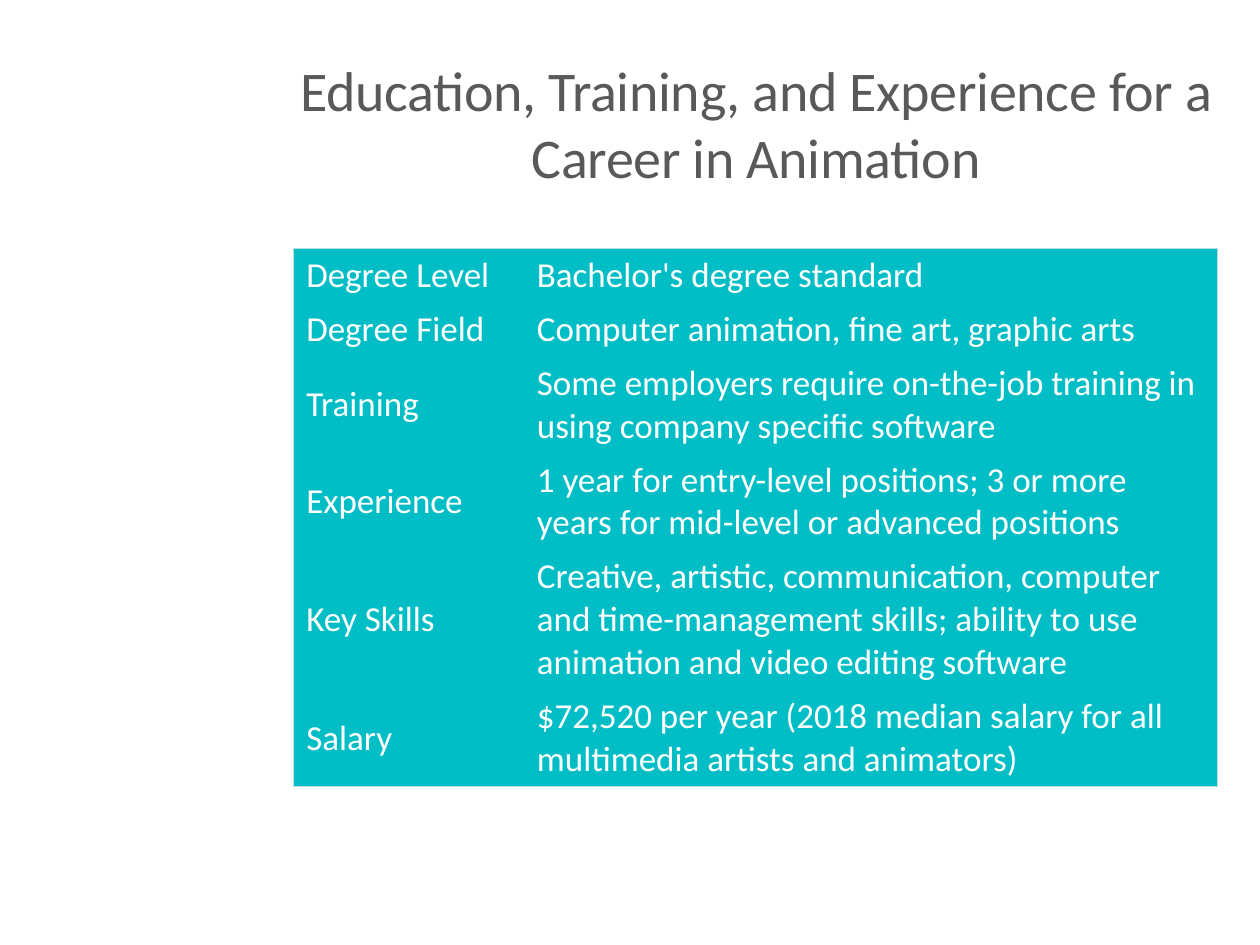
from typing import NamedTuple

from lxml import etree
from pptx import Presentation
from pptx import util as u
from pptx.dml.color import RGBColor
from pptx.enum import text
from pptx.oxml import ns

FONT = "Calibri"
TEAL, WHITE, GRAY, EDGE = "00BDC6", "FFFFFF", "595959", "B8DCDE"
LINE_HEIGHT, CELL_MARGIN = 24.4, 3.2


class Requirement(NamedTuple):
    label: str
    detail: str
    lines: int


REQUIREMENTS = [
    Requirement("Degree Level", "Bachelor's degree standard", 1),
    Requirement("Degree Field", "Computer animation, fine art, graphic arts", 1),
    Requirement("Training", "Some employers require on-the-job training in using "
                "company specific software", 2),
    Requirement("Experience", "1 year for entry-level positions; 3 or more years for "
                "mid-level or advanced positions", 2),
    Requirement("Key Skills", "Creative, artistic, communication, computer and "
                "time-management skills; ability to use animation and video editing "
                "software", 3),
    Requirement("Salary", "$72,520 per year (2018 median salary for all multimedia "
                "artists and animators)", 2),
]


def color(value: str) -> RGBColor:
    return RGBColor.from_string(value)


def add_run(paragraph, wording: str, size: float, shade: str):
    run = paragraph.add_run()
    run.text = wording
    run.font.name = FONT
    run.font.size = u.Pt(size)
    run.font.color.rgb = color(shade)
    return run


def set_borders(cell, visible: dict[str, bool]) -> None:
    """Draw the visible edges (keys L, R, T, B) and clear the others."""
    properties = cell._tc.get_or_add_tcPr()
    for side, shown in visible.items():
        line = etree.SubElement(properties, ns.qn(f"a:ln{side}"), w=str(u.Pt(0.75)))
        if shown:
            fill = etree.SubElement(line, ns.qn("a:solidFill"))
            etree.SubElement(fill, ns.qn("a:srgbClr"), val=EDGE)
        else:
            etree.SubElement(line, ns.qn("a:noFill"))


def add_title(slide, wording: str) -> None:
    title = slide.shapes.title
    title.left, title.top = u.Pt(146.9), u.Pt(30.2)
    title.width, title.height = u.Pt(570.2), u.Pt(78.5)
    frame = title.text_frame
    frame.margin_left = frame.margin_right = frame.margin_bottom = 0
    frame.margin_top = u.Pt(1)
    frame.word_wrap = True
    frame.auto_size = text.MSO_AUTO_SIZE.NONE
    frame.vertical_anchor = text.MSO_ANCHOR.MIDDLE
    heading = frame.paragraphs[0]
    heading.alignment = text.PP_ALIGN.CENTER
    run = add_run(heading, wording, 32, GRAY)
    run.font._element.set("spc", "-20")


def add_requirements(slide, requirements: list[Requirement]) -> None:
    heights = [item.lines * LINE_HEIGHT + 2 * CELL_MARGIN for item in requirements]
    widths = [131.8, 396]
    table = slide.shapes.add_table(
        len(heights), len(widths), u.Pt(167.8), u.Pt(141.8),
        u.Pt(sum(widths)), u.Pt(sum(heights))).table
    table.first_row = table.horz_banding = False
    for column, width in zip(table.columns, widths):
        column.width = u.Pt(width)
    last = len(requirements) - 1
    for r, (item, height) in enumerate(zip(requirements, heights)):
        table.rows[r].height = u.Pt(height)
        for c, wording in enumerate((item.label, item.detail)):
            cell = table.cell(r, c)
            set_borders(cell, {"L": c == 0, "R": c == 1, "T": r == 0, "B": r == last})
            cell.fill.solid()
            cell.fill.fore_color.rgb = color(TEAL)
            cell.margin_top = cell.margin_bottom = u.Pt(CELL_MARGIN)
            cell.vertical_anchor = text.MSO_ANCHOR.MIDDLE
            add_run(cell.text_frame.paragraphs[0], wording, 20, WHITE)


def main() -> None:
    deck = Presentation()
    deck.slide_width, deck.slide_height = u.Pt(720), u.Pt(540)
    slide = deck.slides.add_slide(deck.slide_layouts.get_by_name("Title Only"))
    add_title(slide, "Education, Training, and Experience for a Career in Animation")
    add_requirements(slide, REQUIREMENTS)
    deck.save("out.pptx")


if __name__ == "__main__":
    main()
